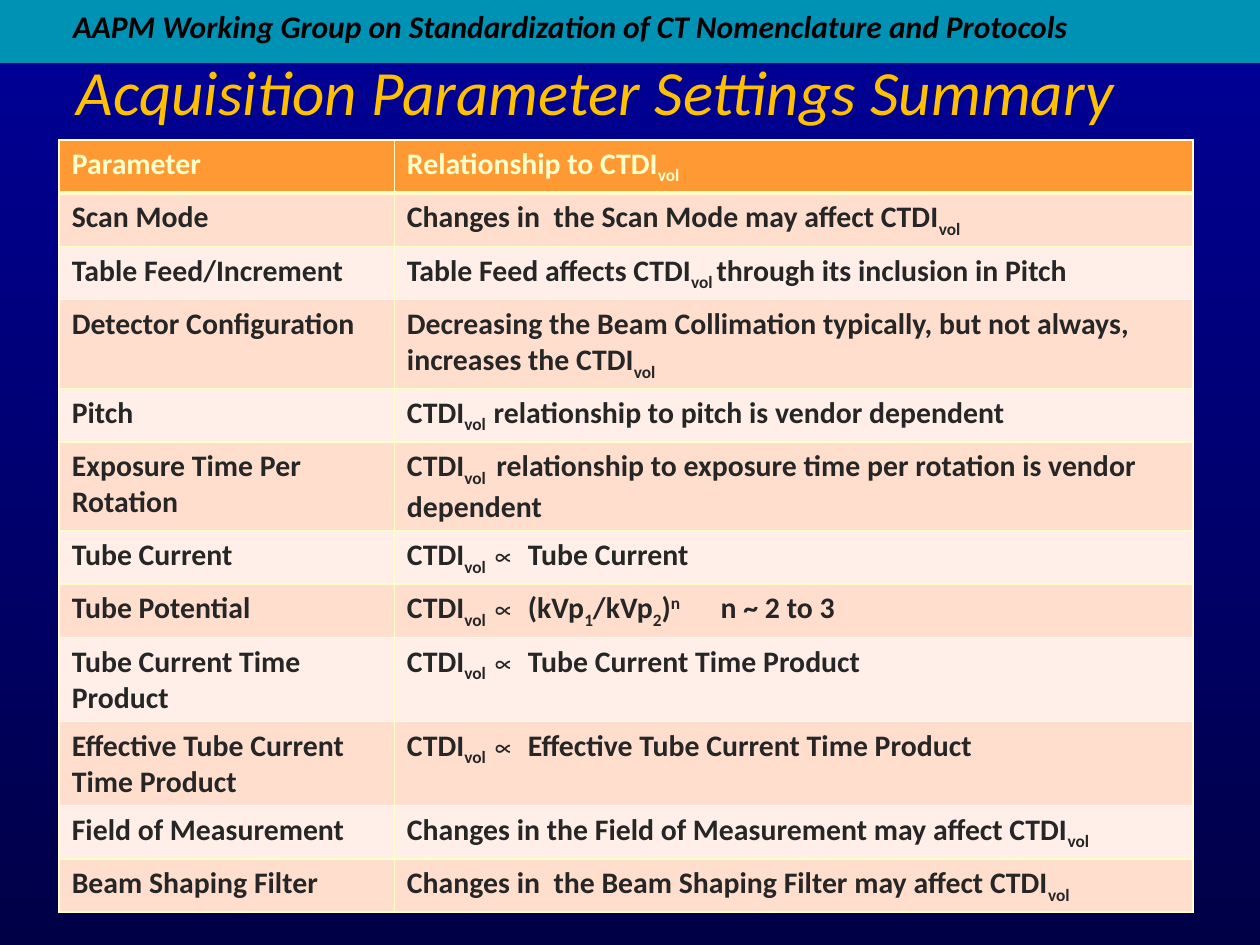
import pptx
import pptx.dml.color
import pptx.enum.shapes
import pptx.enum.text
import pptx.oxml
import pptx.oxml.ns
import pptx.util

Inches = pptx.util.Inches
COLORS = {
    "band": "0092B5", "top": "000099", "bottom": "000047",
    "title": "FFC000", "black": "000000", "text": "262626",
    "cream": "FFFFCC", "header": "FF9933", "odd": "FFDECE", "even": "FFEFE8",
}
BASELINES = {"sub": "-25000", "super": "30000"}
VOL = ("vol", "sub")
CTDI = ["CTDI", ("vol ", "sub")]
PROPORTIONAL = CTDI + [("∝ ", "symbol")]
ROWS = [
    ("Parameter", ["Relationship to CTDI", VOL]),
    ("Scan Mode", ["Changes in  the Scan Mode may affect CTDI", VOL]),
    ("Table Feed/Increment",
     ["Table Feed affects CTDI", ("vol ", "sub"), "through its inclusion in Pitch"]),
    ("Detector Configuration",
     ["Decreasing the Beam Collimation typically, but not always, increases the CTDI", VOL]),
    ("Pitch", ["CTDI", ("vol  ", "sub"), "relationship to pitch is vendor dependent"]),
    ("Exposure Time Per Rotation",
     CTDI + [" relationship to exposure time per rotation is vendor dependent"]),
    ("Tube Current", PROPORTIONAL + ["Tube Current"]),
    ("Tube Potential",
     PROPORTIONAL + ["(kVp", ("1", "sub"), "/kVp", ("2", "sub"), ")", ("n", "super"),
                     "\tn ~ 2 to 3"]),
    ("Tube Current Time Product", PROPORTIONAL + ["Tube Current Time Product"]),
    ("Effective Tube Current Time Product",
     PROPORTIONAL + ["Effective Tube Current Time Product"]),
    ("Field of Measurement", ["Changes in the Field of Measurement may affect CTDI", VOL]),
    ("Beam Shaping Filter", ["Changes in  the Beam Shaping Filter may affect CTDI", VOL]),
]


def rgb(name):
    return pptx.dml.color.RGBColor.from_string(COLORS[name])


class SlideBuilder:
    font = "Calibri"
    symbol_font = "Arial"
    tab_stop = Inches(2.49)

    def __init__(self, deck):
        self.slide = deck.slides.add_slide(deck.slide_layouts[5])

    def background(self):
        fill = self.slide.background.fill
        fill.gradient()
        fill.gradient_angle = 270
        for stop, color in zip(fill.gradient_stops, ("top", "bottom")):
            stop.color.rgb = rgb(color)

    def style(self, para, size, color, bold=False, italic=False):
        para.alignment = pptx.enum.text.PP_ALIGN.LEFT
        para.font.name = self.font
        para.font.size = pptx.util.Pt(size)
        para.font.bold = bold
        para.font.italic = italic
        para.font.color.rgb = rgb(color)

    def band(self, left, top, width, height):
        band = self.slide.shapes.add_shape(
            pptx.enum.shapes.MSO_SHAPE.RECTANGLE, left, top, width, height)
        band.shadow.inherit = False
        band.fill.solid()
        band.fill.fore_color.rgb = rgb("band")
        band.line.fill.background()

    def label(self, text, left, top, width, height):
        box = self.slide.shapes.add_textbox(left, top, width, height)
        box.text_frame.word_wrap = False
        para = box.text_frame.paragraphs[0]
        para.text = text
        self.style(para, 18, "black", bold=True, italic=True)

    def title(self, text, left, top, width, height):
        title = self.slide.shapes.title
        title.left, title.top, title.width, title.height = left, top, width, height
        frame = title.text_frame
        frame.text = text
        frame.auto_size = pptx.enum.text.MSO_AUTO_SIZE.NONE
        frame.vertical_anchor = pptx.enum.text.MSO_ANCHOR.BOTTOM
        self.style(frame.paragraphs[0], 36, "title", italic=True)

    def borders(self, cell, header):
        properties = cell._tc.get_or_add_tcPr()
        for side in "LRTB":
            width = pptx.util.Pt(3 if header and side == "B" else 1)
            properties.append(pptx.oxml.parse_xml(
                f'<a:ln{side} {pptx.oxml.ns.nsdecls("a")} w="{width}"><a:solidFill>'
                f'<a:srgbClr val="{COLORS["cream"]}"/></a:solidFill></a:ln{side}>'))

    def cell(self, cell, pieces, fill, header):
        self.borders(cell, header)
        cell.fill.solid()
        cell.fill.fore_color.rgb = rgb(fill)
        para = cell.text_frame.paragraphs[0]
        if any("\t" in piece for piece in pieces):
            para._p.get_or_add_pPr().append(pptx.oxml.parse_xml(
                f'<a:tabLst {pptx.oxml.ns.nsdecls("a")}>'
                f'<a:tab pos="{self.tab_stop}" algn="l"/></a:tabLst>'))
        self.style(para, 17, "cream" if header else "text", bold=True)
        for piece in pieces:
            text, kind = (piece, "plain") if isinstance(piece, str) else piece
            run = para.add_run()
            run.text = text
            if kind in BASELINES:
                run._r.get_or_add_rPr().set("baseline", BASELINES[kind])
            elif kind == "symbol":
                run.font.name = self.symbol_font

    def table(self, rows, left, top, widths, height, row_height):
        frame = self.slide.shapes.add_table(
            len(rows), len(widths), left, top, sum(widths), height)
        table = frame.table
        for column, width in zip(table.columns, widths):
            column.width = width
        for index, (parameter, relationship) in enumerate(rows):
            table.rows[index].height = row_height
            header = index == 0
            fill = "header" if header else "odd" if index % 2 else "even"
            self.cell(table.cell(index, 0), [parameter], fill, header)
            self.cell(table.cell(index, 1), relationship, fill, header)
        frame.height = height


def main():
    deck = pptx.Presentation()
    deck.slide_width, deck.slide_height = Inches(10), Inches(7.5)
    page = SlideBuilder(deck)
    page.background()
    page.band(0, 0, deck.slide_width, Inches(0.5))
    page.label("AAPM Working Group on Standardization of CT Nomenclature and Protocols",
               Inches(0.48), Inches(0.01), Inches(8.36), Inches(0.4))
    page.title("Acquisition Parameter Settings Summary",
               Inches(0.51), Inches(0.32), Inches(9), Inches(0.75))
    page.table(ROWS, Inches(0.47), Inches(1.11), [Inches(2.66), Inches(6.34)],
               Inches(6.17), Inches(0.41))
    deck.save("out.pptx")


if __name__ == "__main__":
    main()
